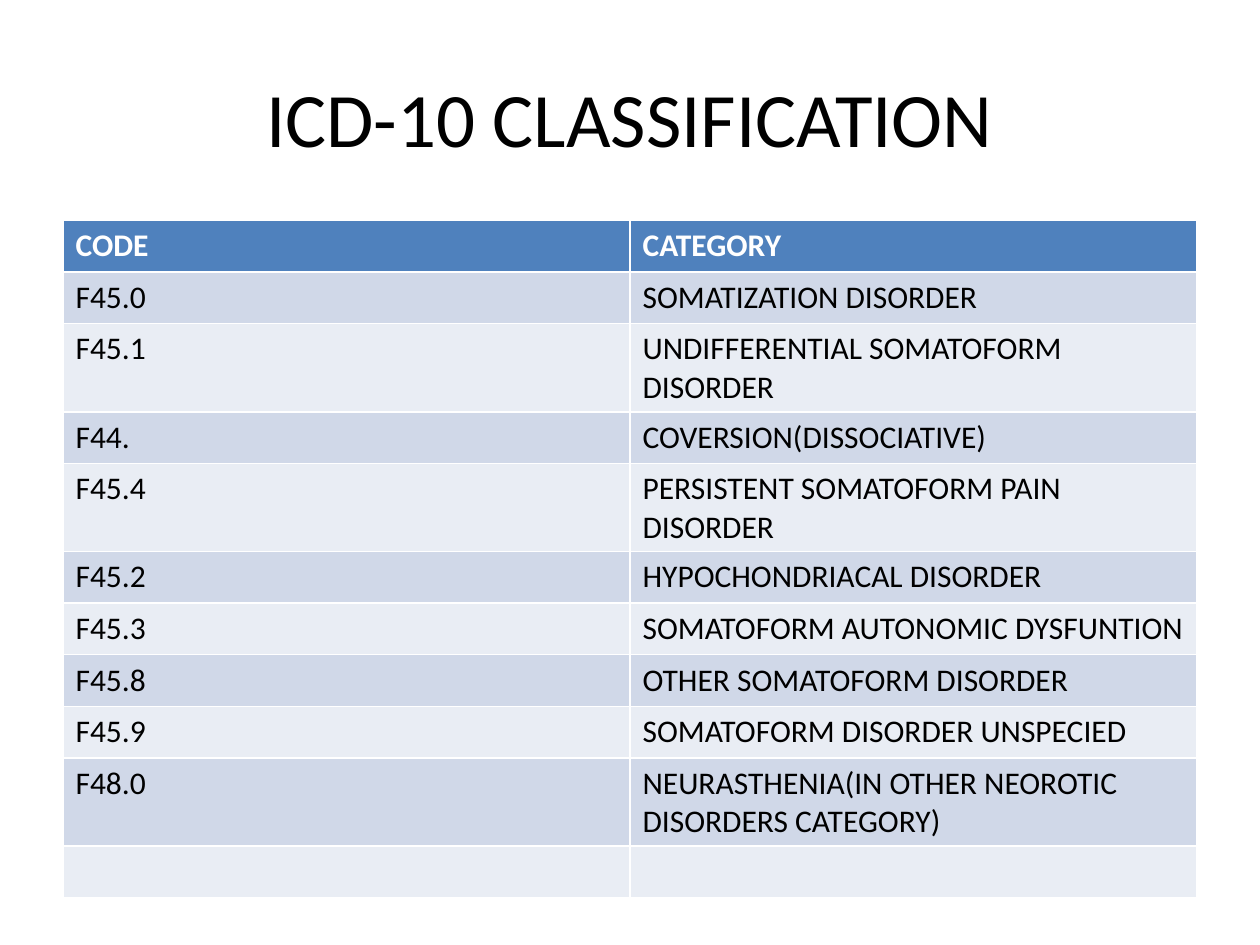
import pptx
import pptx.dml.color
import pptx.enum.text
import pptx.util

ROWS = [
    ("CODE", "CATEGORY"),
    ("F45.0", "SOMATIZATION DISORDER"),
    ("F45.1", "UNDIFFERENTIAL SOMATOFORM DISORDER"),
    ("F44.", "COVERSION(DISSOCIATIVE)"),
    ("F45.4", "PERSISTENT SOMATOFORM PAIN DISORDER"),
    ("F45.2", "HYPOCHONDRIACAL DISORDER"),
    ("F45.3", "SOMATOFORM AUTONOMIC DYSFUNTION"),
    ("F45.8", "OTHER SOMATOFORM DISORDER"),
    ("F45.9", "SOMATOFORM DISORDER UNSPECIED"),
    ("F48.0", "NEURASTHENIA(IN OTHER NEOROTIC DISORDERS CATEGORY)"),
    ("", ""),
]


def color(code):
    return pptx.dml.color.RGBColor.from_string(code)


class Deck:
    """Holds the style and the current slide; lengths are shares of its size."""

    font = "Calibri"
    ink, paper, head = "000000", "FFFFFF", "4F81BD"
    bands = ("D0D8E8", "E9EDF4")

    def __init__(self, wide, high):
        self.prs = pptx.Presentation()
        self.prs.slide_width = pptx.util.Inches(wide)
        self.prs.slide_height = pptx.util.Inches(high)
        self.slide = self.prs.slides.add_slide(self.prs.slide_layouts[6])

    def box(self, left, top, wide, high):
        w, h = self.prs.slide_width, self.prs.slide_height
        return [round(n) for n in (left * w, top * h, wide * w, high * h)]

    def label(self, frame, text, size, ink, bold=False):
        run = frame.paragraphs[0].add_run()
        run.text = text
        form = {"name": self.font, "size": pptx.util.Pt(size), "bold": bold}
        for key, value in form.items():
            setattr(run.font, key, value)
        run.font.color.rgb = color(ink)

    def title(self, text, *area):
        frame = self.slide.shapes.add_textbox(*self.box(*area)).text_frame
        form = {"word_wrap": True,
                "vertical_anchor": pptx.enum.text.MSO_ANCHOR.MIDDLE}
        for key, value in form.items():
            setattr(frame, key, value)
        self.label(frame, text, 44, self.ink)
        frame.paragraphs[0].alignment = pptx.enum.text.PP_ALIGN.CENTER

    def table(self, rows, *area):
        table = self.slide.shapes.add_table(
            len(rows), len(rows[0]), *self.box(*area)).table
        for r, row in enumerate(rows):
            top = r == 0
            fill = self.head if top else self.bands[(r - 1) % 2]
            for c, text in enumerate(row):
                cell = table.cell(r, c)
                cell.fill.solid()
                cell.fill.fore_color.rgb = color(fill)
                if text:
                    self.label(cell.text_frame, text, 18,
                               self.paper if top else self.ink, top)


def main():
    deck = Deck(10, 7.5)
    deck.title("ICD-10 CLASSIFICATION", 0.05, 0.04, 0.9, 1 / 6)
    deck.table(ROWS, 0.05, 7 / 30, 0.9, 0.6)
    deck.prs.save("out.pptx")


if __name__ == "__main__":
    main()
